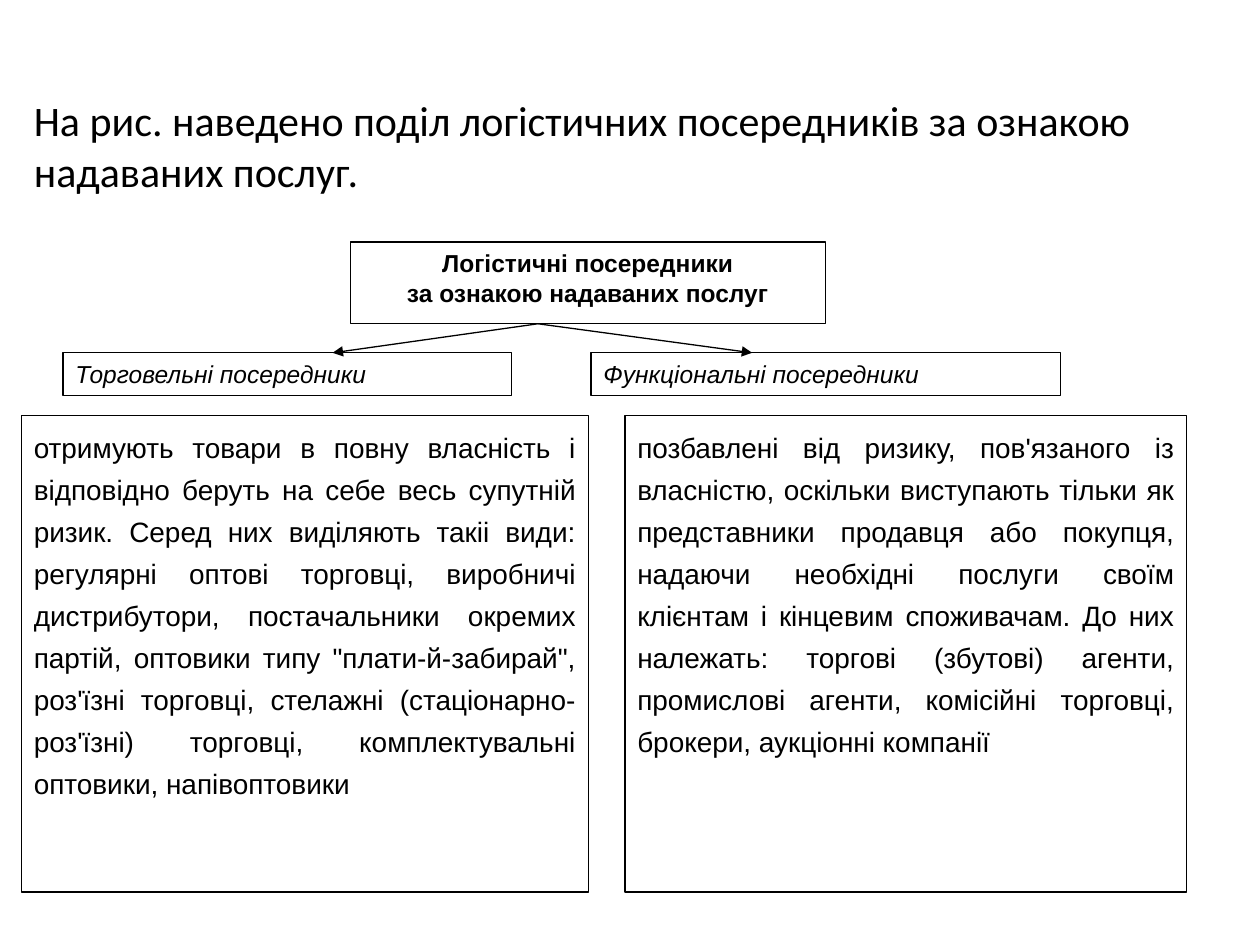
from lxml import etree
from pptx import Presentation
from pptx import util as u
from pptx.dml.color import RGBColor
from pptx.enum import shapes, text
from pptx.oxml.ns import qn

HUES = {"ink": "000000", "paper": "FFFFFF"}
LEFT = (
    "отримують товари в повну власність і відповідно беруть на себе весь супутній ризик. "
    "Серед них виділяють такіі види: регулярні оптові торговці, виробничі дистрибутори, "
    "постачальники окремих партій, оптовики типу \"плати-й-забирай\", роз'їзні торговці, "
    "стелажні (стаціонарно-роз'їзні) торговці, комплектувальні оптовики, напівоптовики"
)
RIGHT = (
    "позбавлені від ризику, пов'язаного із власністю, оскільки виступають тільки як "
    "представники продавця або покупця, надаючи необхідні послуги своїм клієнтам і кінцевим "
    "споживачам. До них належать: торгові (збутові) агенти, промислові агенти, комісійні "
    "торговці, брокери, аукціонні компанії"
)


class Sketch:
    """Holds the style and the current slide."""

    def __init__(self, slide):
        self.slide = slide
        self.ink = RGBColor.from_string(HUES["ink"])
        self.paper = RGBColor.from_string(HUES["paper"])
        self.width = u.Pt(0.75)

    def label(self, frame, lines, size, font="Arial", align=text.PP_ALIGN.LEFT,
              bold=False, italic=False, pitch=None):
        frame.word_wrap = True
        frame.text = "\n".join(lines)
        for para in frame.paragraphs:
            para.alignment = align
            para.line_spacing = pitch
            para.font.name = font
            para.font.size = u.Pt(size)
            para.font.bold = bold
            para.font.italic = italic
            para.font.color.rgb = self.ink

    def title(self, spot, line):
        frame = self.slide.shapes.add_textbox(*map(u.Inches, spot)).text_frame
        frame.vertical_anchor = text.MSO_ANCHOR.BOTTOM
        self.label(frame, [line], 24, font="Calibri")

    def box(self, spot, lines, size, **style):
        shape = self.slide.shapes.add_shape(
            shapes.MSO_SHAPE.RECTANGLE, *map(u.Inches, spot))
        shape.shadow.inherit = False
        shape.fill.solid()
        shape.fill.fore_color.rgb = self.paper
        shape.line.color.rgb = self.ink
        shape.line.width = self.width
        shape.text_frame.vertical_anchor = text.MSO_ANCHOR.TOP
        self.label(shape.text_frame, lines, size, **style)

    def arrow(self, start, end):
        link = self.slide.shapes.add_connector(
            shapes.MSO_CONNECTOR.STRAIGHT, *map(u.Inches, start + end))
        link.line.color.rgb = self.ink
        link.line.width = self.width
        props = link._element.spPr
        etree.SubElement(props.find(qn("a:ln")), qn("a:tailEnd"), type="triangle")
        etree.SubElement(props, qn("a:effectLst"))


def main():
    deck = Presentation()
    deck.slide_width, deck.slide_height = u.Inches(10), u.Inches(7.5)
    art = Sketch(deck.slides.add_slide(deck.slide_layouts[6]))

    art.box((2.78, 1.92, 3.77, 0.65),
            ["Логістичні посередники", "за ознакою надаваних послуг"],
            14, bold=True, align=text.PP_ALIGN.CENTER)

    groups = [
        ("Торговельні посередники", 0.5, 3.56, 2.64, LEFT, 0.17, 4.5),
        ("Функціональні посередники", 4.69, 3.73, 5.97, RIGHT, 4.96, 4.46),
    ]
    for name, x, wide, tip, body, edge, span in groups:
        art.box((x, 2.8, wide, 0.34), [name], 14, italic=True)
        art.arrow((4.27, 2.57), (tip, 2.8))
        art.box((edge, 3.3, span, 3.78), [body], 16,
                align=text.PP_ALIGN.JUSTIFY, pitch=1.25)

    art.title((0.17, 0.29, 9.58, 1.31),
              "На рис. наведено поділ логістичних посередників за ознакою надаваних послуг.")
    deck.save("out.pptx")


if __name__ == "__main__":
    main()
